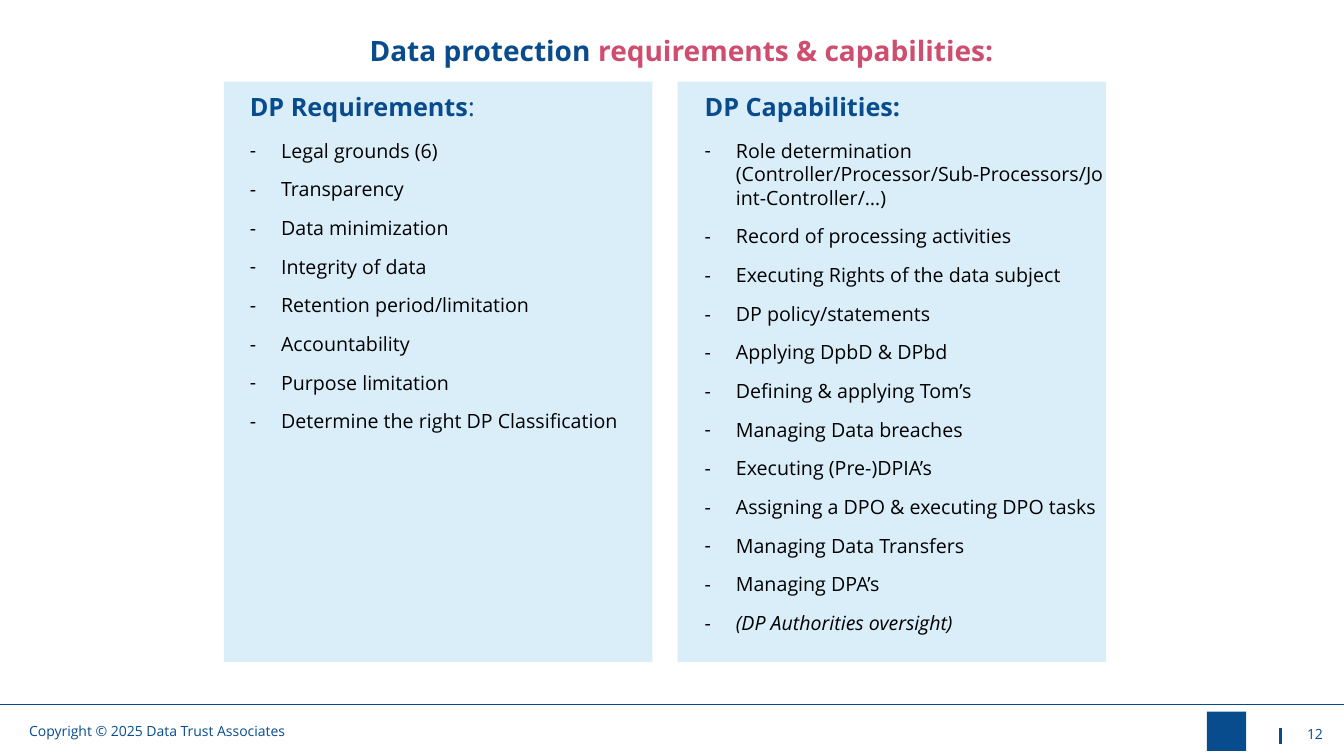
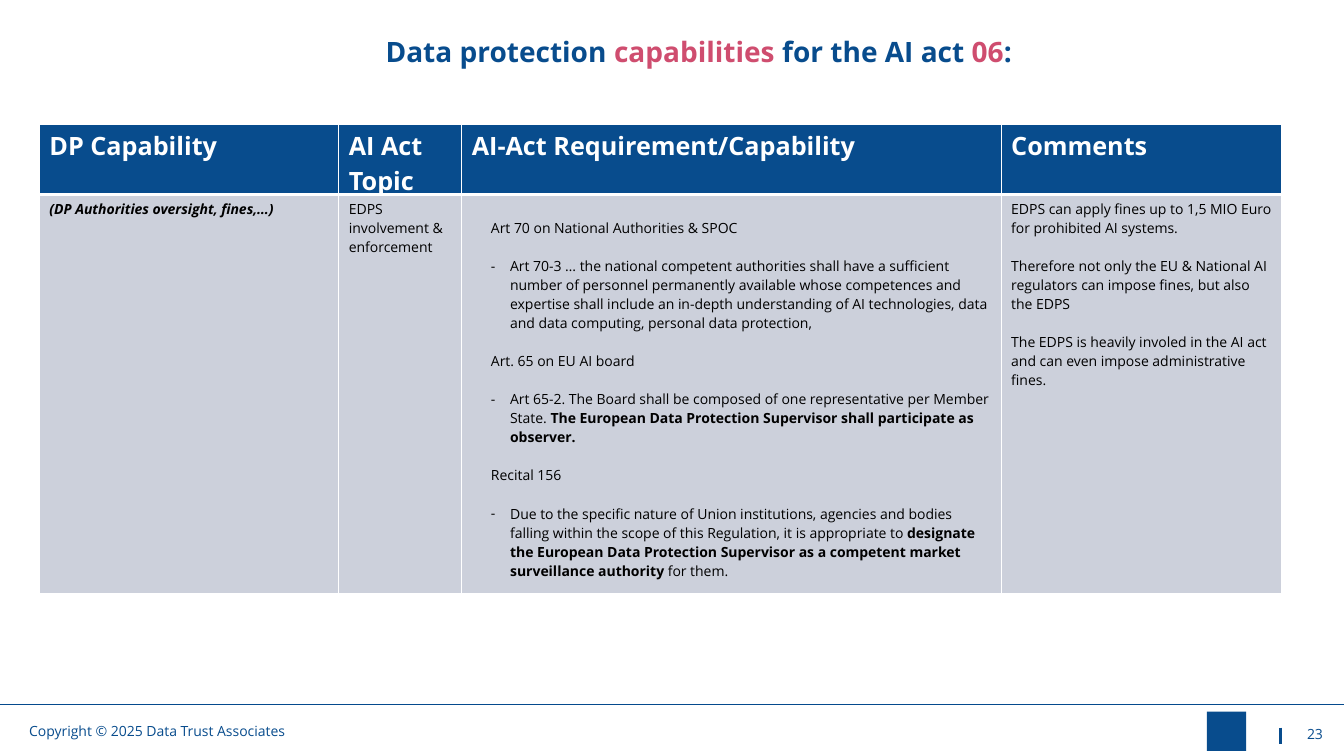
from lxml.etree import SubElement
from pptx import Presentation
from pptx.dml.color import RGBColor
from pptx.enum.shapes import MSO_CONNECTOR, MSO_SHAPE
from pptx.enum.text import MSO_ANCHOR, MSO_AUTO_SIZE, PP_ALIGN
from pptx.oxml.ns import qn
from pptx.util import Emu, Pt

EMU_PER_PX = 9144  # 100 px to the inch
FONT = "Open Sans"
COLORS = {
    "navy": "084C8D",
    "rule": "054A8D",
    "rose": "CF4D6F",
    "panel": "DAEEFA",
    "cell": "CCD0DB",
    "white": "FFFFFF",
    "black": "000000",
}
ITEM_GAP = 10.8   # points between list items
CELL_GAP = 13.6   # points between cell paragraphs

REQUIREMENTS = [
    "Legal grounds (6)",
    "Transparency",
    "Data minimization",
    "Integrity of data",
    "Retention period/limitation",
    "Accountability",
    "Purpose limitation",
    "Determine the right DP Classification",
]
CAPABILITIES = [
    "Role determination (Controller/Processor/Sub-Processors/Joint-Controller/…)",
    "Record of processing activities",
    "Executing Rights of the data subject",
    "DP policy/statements",
    "Applying DpbD & DPbd",
    "Defining & applying Tom’s",
    "Managing Data breaches",
    "Executing (Pre-)DPIA’s",
    "Assigning a DPO & executing DPO tasks",
    "Managing Data Transfers",
    "Managing DPA’s",
    "(DP Authorities oversight)",
]

# Table columns: heading, width
COLUMNS = [
    ("DP Capability", 297),
    ("AI Act Topic", 122),
    ("AI-Act Requirement/Capability", 535),
    ("Comments", 278),
]
ROW_HEIGHTS = (68, 396)
# Articles: heading, then (text, bold) runs of the bullet below it
ARTICLES = [
    ("Art 70 on National Authorities & SPOC", [
        ("Art 70-3 … the national competent authorities shall have a sufficient "
         "number of personnel permanently available whose competences and "
         "expertise shall include an in-depth understanding of AI technologies, "
         "data and data computing, personal data protection,", False)]),
    ("Art. 65 on EU AI board", [
        ("Art 65-2. The Board shall be composed of one representative per "
         "Member State. ", False),
        ("The European Data Protection Supervisor shall participate as "
         "observer.", True)]),
    ("Recital 156", [
        ("Due to the specific nature of Union institutions, agencies and bodies "
         "falling within the scope of this Regulation, it is appropriate to ",
         False),
        ("designate the European Data Protection Supervisor as a competent "
         "market surveillance authority ", True),
        ("for them.", False)]),
]
COMMENTS = [
    "EDPS can apply fines up to 1,5 MIO Euro for prohibited AI systems.",
    "Therefore not only the EU & National AI regulators can impose fines, "
    "but also the EDPS",
    "The EDPS is heavily involed in the AI act and can even impose "
    "administrative fines.",
]


def px(length):
    return Emu(length * EMU_PER_PX)


def rgb(color):
    return RGBColor.from_string(COLORS[color])


# Text
def add_run(paragraph, text, size, color="black", bold=False, italic=False):
    run = paragraph.add_run()
    run.text = text
    font = run.font
    font.name, font.size = FONT, Pt(size)
    font.bold, font.italic = bold, italic
    font.color.rgb = rgb(color)


def indent(paragraph, left, hanging=0):
    """Indent a paragraph; a hanging indent gets a dash."""
    properties = paragraph._p.get_or_add_pPr()
    properties.set("marL", str(px(left)))
    properties.set("indent", str(px(-hanging)))
    if hanging:
        SubElement(properties, qn("a:buFont"), typeface=FONT)
        SubElement(properties, qn("a:buChar"), char="-")


def next_paragraph(frame, gap):
    """Return the unused first paragraph, or a new one below a gap."""
    first = frame.paragraphs[0]
    if not first.runs:
        return first
    paragraph = frame.add_paragraph()
    paragraph.space_before = Pt(gap)
    return paragraph


def add_text_frame(slide, left, top, width, height):
    frame = slide.shapes.add_textbox(
        px(left), px(top), px(width), px(height)).text_frame
    frame.word_wrap = True
    frame.auto_size = MSO_AUTO_SIZE.SHAPE_TO_FIT_TEXT
    return frame


# Plain parts
def add_rectangle(slide, left, top, width, height, color):
    rectangle = slide.shapes.add_shape(
        MSO_SHAPE.RECTANGLE, px(left), px(top), px(width), px(height))
    rectangle.shadow.inherit = False
    rectangle.fill.solid()
    rectangle.fill.fore_color.rgb = rgb(color)
    rectangle.line.fill.background()


def add_line(slide, start, end, color, weight):
    line = slide.shapes.add_connector(
        MSO_CONNECTOR.STRAIGHT, *(px(value) for value in start + end))
    line.line.color.rgb = rgb(color)
    line.line.width = Pt(weight)
    SubElement(line._element.spPr, qn("a:effectLst"))


# Footer and title shared by the slides
def add_framed_slide(deck, number):
    slide = deck.slides.add_slide(deck.slide_layouts[6])
    add_line(slide, (1270, 722), (1270, 738), "navy", 1.5)
    add_line(slide, (0, 699), (1333, 699), "rule", 1)
    copyright_line = add_text_frame(slide, 19, 712, 359, 27)
    add_run(copyright_line.paragraphs[0],
            "Copyright © 2025 Data Trust Associates", 10, "navy")
    add_rectangle(slide, 1197, 706, 39, 39, "navy")
    page = add_text_frame(slide, 1263, 708, 59, 40)
    page.auto_size = MSO_AUTO_SIZE.NONE
    page.vertical_anchor = MSO_ANCHOR.MIDDLE
    page.paragraphs[0].alignment = PP_ALIGN.RIGHT
    add_run(page.paragraphs[0], str(number), 10, "navy")
    return slide


def add_title(slide, left, top, parts):
    title = add_text_frame(slide, left, top, 730, 44).paragraphs[0]
    title.alignment = PP_ALIGN.CENTER
    for text, color in parts:
        add_run(title, text, 20, color, bold=True)


# Panel with a heading and a dashed list
def add_panel(slide, left, text_left, text_width, heading, items):
    add_rectangle(slide, left, 81, 425, 576, "panel")
    frame = add_text_frame(slide, text_left, 86, text_width, 352)
    for text, bold in heading:
        add_run(frame.paragraphs[0], text, 18, "navy", bold)
    for index, item in enumerate(items):
        paragraph = next_paragraph(frame, ITEM_GAP if index else 12)
        indent(paragraph, 31, 31)
        add_run(paragraph, item, 14, italic=item.startswith("("))


# Table
def style_cell(cell, color, top, bottom):
    properties = cell._tc.get_or_add_tcPr()
    for side, weight in (("L", 1), ("R", 1), ("T", top), ("B", bottom)):
        border = SubElement(properties, qn(f"a:ln{side}"), w=str(Pt(weight)))
        fill = SubElement(border, qn("a:solidFill"))
        SubElement(fill, qn("a:srgbClr"), val=COLORS["white"])
    cell.fill.solid()
    cell.fill.fore_color.rgb = rgb(color)


def add_articles(cell):
    cell.margin_top = px(24)
    frame = cell.text_frame
    for heading, runs in ARTICLES:
        paragraph = next_paragraph(frame, CELL_GAP)
        indent(paragraph, 19)
        add_run(paragraph, heading, 10)
        paragraph = next_paragraph(frame, CELL_GAP)
        indent(paragraph, 38, 19)
        for text, bold in runs:
            add_run(paragraph, text, 10, bold=bold)


def add_capability_table(slide):
    table = slide.shapes.add_table(
        len(ROW_HEIGHTS), len(COLUMNS),
        px(39), px(123), px(1232), px(sum(ROW_HEIGHTS))).table
    for row, height in zip(table.rows, ROW_HEIGHTS):
        row.height = px(height)
    for index, (heading, width) in enumerate(COLUMNS):
        table.columns[index].width = px(width)
        head, body = table.cell(0, index), table.cell(1, index)
        style_cell(head, "navy", 1, 3)
        style_cell(body, "cell", 3, 1)
        add_run(head.text_frame.paragraphs[0], heading, 18, "white", bold=True)

    capability, topic, requirement, comments = table.rows[1].cells
    add_run(capability.text_frame.paragraphs[0],
            "(DP Authorities oversight, fines,…)", 10, bold=True, italic=True)
    add_run(topic.text_frame.paragraphs[0],
            "EDPS involvement & enforcement", 10)
    add_articles(requirement)
    for comment in COMMENTS:
        add_run(next_paragraph(comments.text_frame, CELL_GAP), comment, 10)


def main():
    deck = Presentation()
    deck.slide_width, deck.slide_height = px(1333), px(750)

    # Requirements and capabilities
    overview = add_framed_slide(deck, 12)
    add_panel(overview, 222, 238, 394,
              [("DP Requirements", True), (":", False)], REQUIREMENTS)
    add_panel(overview, 672, 689, 418,
              [("DP Capabilities:", True)], CAPABILITIES)
    add_title(overview, 311, 28, [("Data protection ", "navy"),
                                  ("requirements & capabilities:", "rose")])

    # Capabilities for the AI act
    ai_act = add_framed_slide(deck, 23)
    add_capability_table(ai_act)
    add_title(ai_act, 328, 29, [("Data protection ", "navy"),
                                ("capabilities ", "rose"),
                                ("for the AI act ", "navy"),
                                ("06", "rose"), (":", "navy")])

    deck.save("out.pptx")


if __name__ == "__main__":
    main()
